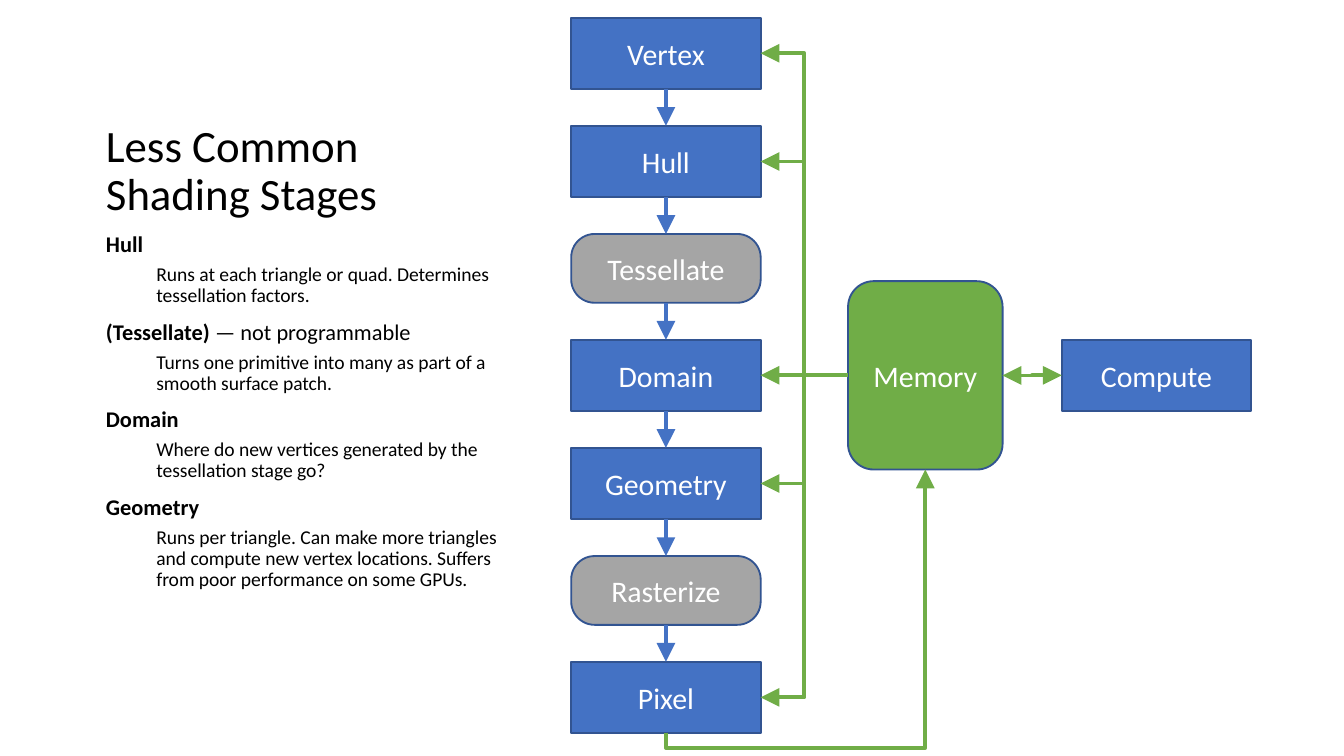
import pptx
import pptx.dml.color
import pptx.enum.shapes
import pptx.enum.text
import pptx.oxml.ns
import pptx.util
from lxml import etree

WIDTH = pptx.util.Inches(10)
HEIGHT = WIDTH * 9 // 16
COLORS = {
    "stage": "4472C4",
    "fixed": "A5A5A5",
    "memory": "70AD47",
    "outline": "325491",
    "light": "FFFFFF",
    "dark": "000000",
}
TOP, LEFT, BOTTOM, RIGHT = range(4)
SHAPES = pptx.enum.shapes.MSO_SHAPE
CONNECTORS = pptx.enum.shapes.MSO_CONNECTOR
ANCHORS = pptx.enum.text.MSO_ANCHOR

STAGE_LEFT, STAGE_WIDTH = 42.5, 14.1
STAGE_HEIGHT, FIXED_HEIGHT = 9.43, 9.1
FIRST_ROW, STAGE_GAP = 2.34, 4.88
STAGES = ["Vertex", "Hull", "Tessellate", "Domain", "Geometry", "Rasterize", "Pixel"]
FIXED_STAGES = {"Tessellate", "Rasterize"}
NOTES = [
    ("Hull", "", "Runs at each triangle or quad. Determines tessellation factors."),
    ("(Tessellate) ", "— not programmable",
     "Turns one primitive into many as part of a smooth surface patch."),
    ("Domain", "", "Where do new vertices generated by the tessellation stage go?"),
    ("Geometry", "",
     "Runs per triangle. Can make more triangles and compute new vertex locations. "
     "Suffers from poor performance on some GPUs."),
]


def column(number):
    return round(WIDTH * number / 100)


def row(number):
    return round(HEIGHT * number / 100)


def rgb(name):
    return pptx.dml.color.RGBColor.from_string(COLORS[name])


def add_span(para, text, size=12, color="dark", bold=False):
    span = para.add_run()
    span.text = text
    span.font.name = "Calibri"
    span.font.size = pptx.util.Pt(size)
    span.font.bold = bold
    span.font.color.rgb = rgb(color)


def add_text_area(page, left, top, width, height, anchor):
    box = page.shapes.add_textbox(column(left), row(top), column(width), row(height))
    frame = box.text_frame
    frame.word_wrap = True
    frame.vertical_anchor = anchor
    frame.margin_left = pptx.util.Inches(0.1)
    frame.margin_right = pptx.util.Inches(0.14)
    frame.margin_top = frame.margin_bottom = pptx.util.Inches(0.05)
    return frame


def add_title(page, text):
    frame = add_text_area(page, 6.9, 6.7, 32.3, 23.3, ANCHORS.BOTTOM)
    para = frame.paragraphs[0]
    para.line_spacing = 0.9
    add_span(para, text, size=24)


def add_notes(page):
    frame = add_text_area(page, 6.9, 30, 32.3, 55.7, ANCHORS.TOP)
    para = frame.paragraphs[0]
    for index, (heading, remark, detail) in enumerate(NOTES):
        if index:
            para = frame.add_paragraph()
        para.line_spacing = 0.9
        para.space_before = pptx.util.Pt(7.5)
        add_span(para, heading, bold=True)
        if remark:
            add_span(para, remark)
        para = frame.add_paragraph()
        para.level = 1
        para.line_spacing = 0.9
        para.space_before = pptx.util.Pt(3.8)
        properties = para._p.get_or_add_pPr()
        properties.set("marL", str(pptx.util.Pt(27)))
        properties.set("indent", "0")
        add_span(para, detail, size=10.5)


def add_block(page, text, left, top, width, height, fill, kind=SHAPES.RECTANGLE):
    box = page.shapes.add_shape(kind, column(left), row(top), column(width), row(height))
    box.shadow.inherit = False
    box.fill.solid()
    box.fill.fore_color.rgb = rgb(fill)
    box.line.color.rgb = rgb("outline")
    box.line.width = pptx.util.Pt(1)
    box.text_frame.vertical_anchor = ANCHORS.MIDDLE
    para = box.text_frame.paragraphs[0]
    para.alignment = pptx.enum.text.PP_ALIGN.CENTER
    add_span(para, text, size=16, color="light")
    return box


def add_stages(page):
    stages = {}
    top = FIRST_ROW
    for name in STAGES:
        fixed = name in FIXED_STAGES
        height = FIXED_HEIGHT if fixed else STAGE_HEIGHT
        kind = SHAPES.ROUNDED_RECTANGLE if fixed else SHAPES.RECTANGLE
        box = add_block(page, name, STAGE_LEFT, top, STAGE_WIDTH, height,
                        "fixed" if fixed else "stage", kind)
        if fixed:
            box.adjustments[0] = 0.34
        stages[name] = box
        top += height + STAGE_GAP
    return stages


def style_arrow(arrow, color, ends=("tailEnd",)):
    arrow.line.color.rgb = rgb(color)
    arrow.line.width = pptx.util.Pt(2)
    line = arrow.line._get_or_add_ln()
    for end in ends:
        etree.SubElement(line, pptx.oxml.ns.qn(f"a:{end}"),
                         type="triangle", w="lg", len="lg")
    etree.SubElement(arrow._element.spPr, pptx.oxml.ns.qn("a:effectLst"))


def link(page, start, start_side, finish, finish_side, kind, color, ends=("tailEnd",)):
    arrow = page.shapes.add_connector(kind, start.left, start.top, finish.left, finish.top)
    arrow.begin_connect(start, start_side)
    arrow.end_connect(finish, finish_side)
    style_arrow(arrow, color, ends)


def link_below(page, start, finish, overshoot):
    begin_x, begin_y = start.left + start.width // 2, start.top + start.height
    end_x, end_y = finish.left + finish.width // 2, finish.top + finish.height
    center_x, center_y = (begin_x + end_x) // 2, (begin_y + end_y) // 2
    half_rise, half_run = (begin_y - end_y) // 2, (end_x - begin_x) // 2
    arrow = page.shapes.add_connector(
        CONNECTORS.ELBOW, center_x + half_rise, center_y + half_run,
        center_x - half_rise, center_y - half_run)
    properties = arrow._element.spPr
    properties.find(pptx.oxml.ns.qn("a:xfrm")).set("rot", "5400000")
    geometry = properties.find(pptx.oxml.ns.qn("a:prstGeom"))
    guides = geometry.find(pptx.oxml.ns.qn("a:avLst"))
    if guides is None:
        guides = etree.SubElement(geometry, pptx.oxml.ns.qn("a:avLst"))
    bend = round(-100000 * overshoot / (2 * half_rise))
    etree.SubElement(guides, pptx.oxml.ns.qn("a:gd"), name="adj1", fmla=f"val {bend}")
    style_arrow(arrow, "memory")


def main():
    deck = pptx.Presentation()
    deck.slide_width, deck.slide_height = WIDTH, HEIGHT
    page = deck.slides.add_slide(deck.slide_layouts[6])
    add_title(page, "Less Common Shading Stages")
    add_notes(page)
    stages = add_stages(page)
    memory = add_block(page, "Memory", 63.1, 37.2, 11.5, 24.92, "memory",
                       SHAPES.ROUNDED_RECTANGLE)
    compute = add_block(page, "Compute", 79, 44.94, STAGE_WIDTH, STAGE_HEIGHT, "stage")
    for upper, lower in zip(STAGES, STAGES[1:]):
        link(page, stages[upper], BOTTOM, stages[lower], TOP,
             CONNECTORS.STRAIGHT, "stage")
    for name in STAGES:
        if name not in FIXED_STAGES:
            link(page, memory, LEFT, stages[name], RIGHT, CONNECTORS.ELBOW, "memory")
    link(page, compute, LEFT, memory, RIGHT, CONNECTORS.ELBOW, "memory",
         ends=("headEnd", "tailEnd"))
    link_below(page, stages["Pixel"], memory, row(2))
    deck.save("out.pptx")


if __name__ == "__main__":
    main()
